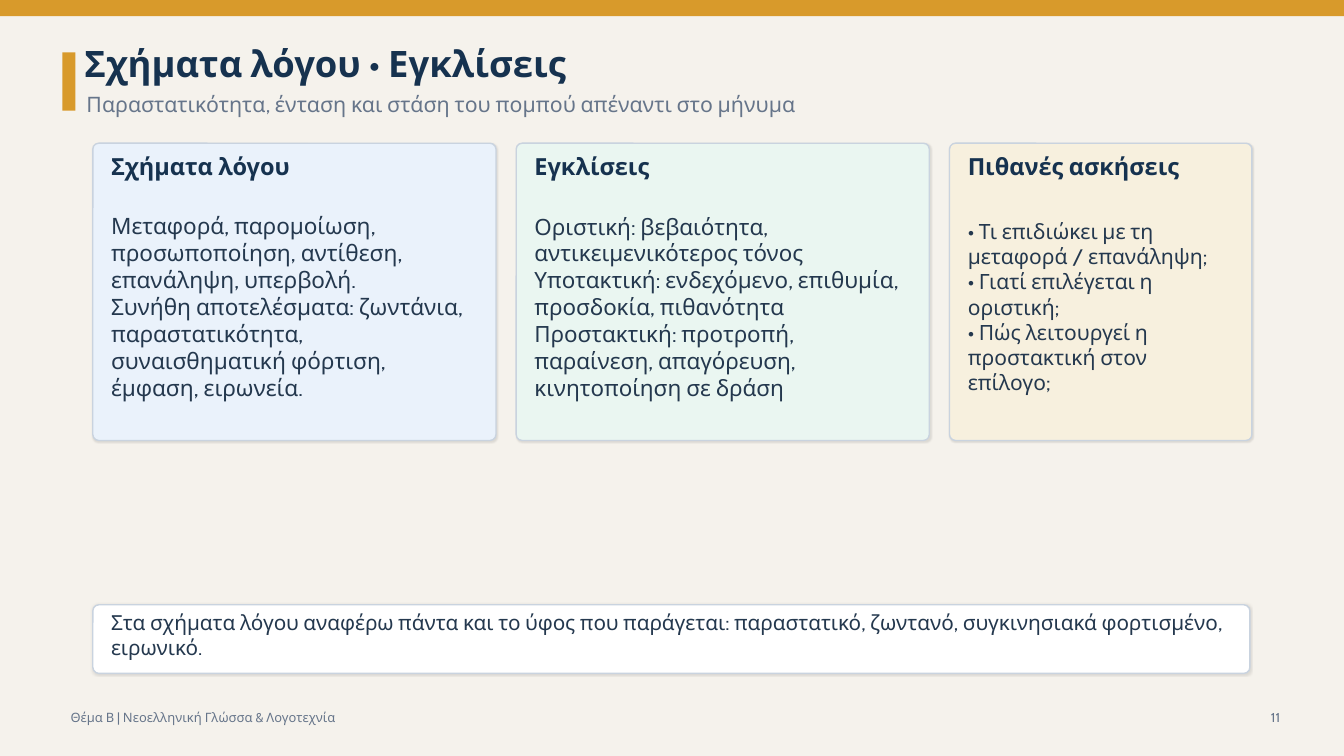
"""Build the slide on figures of speech and grammatical moods."""
from lxml import etree
from pptx import Presentation
from pptx.dml.color import RGBColor
from pptx.enum.shapes import MSO_SHAPE
from pptx.enum.text import MSO_ANCHOR, PP_ALIGN
from pptx.oxml import parse_xml
from pptx.oxml.ns import nsdecls, qn
from pptx.util import Cm, Pt

RECTANGLE, ROUNDED = MSO_SHAPE.RECTANGLE, MSO_SHAPE.ROUNDED_RECTANGLE
MIDDLE = MSO_ANCHOR.MIDDLE
LEFT, RIGHT = PP_ALIGN.LEFT, PP_ALIGN.RIGHT

FONT = "Cabin"
GOLD, NAVY, INK, GREY = "D89A2B", "16324F", "24384E", "66758A"
PAPER, WHITE, BORDER = "F5F2EC", "FFFFFF", "C9D3DF"

FRAME_FORMAT = {
    "word_wrap": True,
    "vertical_anchor": MIDDLE,
    "margin_left": 0,
    "margin_right": 0,
    "margin_top": 0,
    "margin_bottom": 0,
}
SHADOW = (
    f'<a:outerShdw {nsdecls("a")} blurRad="{Pt(1.2)}" dist="{Pt(0.5)}" '
    'dir="2700000" algn="ctr" rotWithShape="0"><a:srgbClr val="000000">'
    '<a:alpha val="10000"/></a:srgbClr></a:outerShdw>'
)

CARD_LEFT, CARD_TOP, CARD_HEIGHT = 2.34, 3.61, 7.49
CARD_GAP, CARD_INSET = 0.51, 0.46
NOTE_WIDTH = 29.16
CARDS = [
    (10.16, "EAF2FB", "Σχήματα λόγου", 16.1, [
        "Μεταφορά, παρομοίωση, προσωποποίηση, αντίθεση, επανάληψη, υπερβολή.",
        "Συνήθη αποτελέσματα: ζωντάνια, παραστατικότητα, "
        "συναισθηματική φόρτιση, έμφαση, ειρωνεία.",
    ]),
    (10.41, "EAF6F1", "Εγκλίσεις", 16, [
        "Οριστική: βεβαιότητα, αντικειμενικότερος τόνος",
        "Υποτακτική: ενδεχόμενο, επιθυμία, προσδοκία, πιθανότητα",
        "Προστακτική: προτροπή, παραίνεση, απαγόρευση, "
        "κινητοποίηση σε δράση",
    ]),
    (7.62, "F7F0DE", "Πιθανές ασκήσεις", 15, [
        "• Τι επιδιώκει με τη μεταφορά / επανάληψη;",
        "• Γιατί επιλέγεται η οριστική;",
        "• Πώς λειτουργεί η προστακτική στον επίλογο;",
    ]),
]
NOTE = ("Στα σχήματα λόγου αναφέρω πάντα και το ύφος που παράγεται: "
        "παραστατικό, ζωντανό, συγκινησιακά φορτισμένο, ειρωνικό.")


def color(value):
    """Return the colour for a hex string."""
    return RGBColor.from_string(value)


def apply(target, values):
    """Set every attribute in values on target."""
    for name, value in values.items():
        setattr(target, name, value)


def add_block(page, kind, place, fill):
    """Add a filled shape without outline or shadow."""
    block = page.shapes.add_shape(kind, *map(Cm, place))
    block.shadow.inherit = False
    block.fill.solid()
    block.fill.fore_color.rgb = color(fill)
    block.line.fill.background()
    return block


def add_panel(page, place, fill, radius):
    """Add a rounded, outlined panel with a soft shadow."""
    panel = add_block(page, ROUNDED, place, fill)
    panel.adjustments[0] = radius
    panel.line.color.rgb = color(BORDER)
    panel.line.width = Pt(1)
    effects = panel.element.spPr.find(qn("a:effectLst"))
    effects.append(parse_xml(etree.tostring(etree.fromstring(SHADOW))))


def add_text(page, place, lines, size, ink, bold=False, align=LEFT):
    """Add a text box with one paragraph for each line."""
    box = page.shapes.add_textbox(*map(Cm, place))
    apply(box.text_frame, FRAME_FORMAT)
    for index, line in enumerate(lines):
        frame = box.text_frame
        para = frame.add_paragraph() if index else frame.paragraphs[0]
        para.alignment = align
        span = para.add_run()
        span.text = line
        apply(span.font, {"name": FONT, "size": Pt(size), "bold": bold})
        span.font.color.rgb = color(ink)


def add_card(page, left, width, fill, heading, size, lines):
    """Add a panel with a heading and body text."""
    add_panel(page, (left, CARD_TOP, width, CARD_HEIGHT), fill, 0.02)
    text_left, text_width = left + CARD_INSET, width - 2 * CARD_INSET
    add_text(page, (text_left, 3.91, text_width, 0.56), [heading], 16.8, NAVY, bold=True)
    add_text(page, (text_left, 4.67, text_width, 6.12), lines, size, INK)


def add_header(page):
    """Add the top band, accent, title and subtitle."""
    add_block(page, RECTANGLE, (0, 0, 33.87, 0.41), GOLD)
    add_block(page, RECTANGLE, (1.57, 1.32, 0.33, 1.47), GOLD)
    add_text(page, (2.13, 1.07, 24.38, 1.02), ["Σχήματα λόγου • Εγκλίσεις"], 26, NAVY, bold=True)
    add_text(page, (2.18, 2.34, 27.43, 0.56),
             ["Παραστατικότητα, ένταση και στάση του πομπού απέναντι στο μήνυμα"], 15.2, GREY)


def add_footer(page):
    """Add the course name and page number."""
    add_text(page, (1.78, 17.81, 12.45, 0.51),
             ["Θέμα Β | Νεοελληνική Γλώσσα & Λογοτεχνία"], 9.2, GREY)
    add_text(page, (31.24, 17.81, 1.02, 0.51), ["11"], 9.2, GREY, align=RIGHT)


def add_note(page):
    """Add the reminder panel under the cards."""
    add_panel(page, (CARD_LEFT, 15.24, NOTE_WIDTH, 1.73), WHITE, 0.09)
    add_text(page, (CARD_LEFT + CARD_INSET, 15.32, NOTE_WIDTH - 2 * CARD_INSET, 1.35),
             [NOTE], 14.8, INK)


def main():
    """Build and save the deck."""
    deck = Presentation()
    apply(deck, {"slide_width": Cm(33.87), "slide_height": Cm(19.05)})
    page = deck.slides.add_slide(deck.slide_layouts[6])
    page.background.fill.solid()
    page.background.fill.fore_color.rgb = color(PAPER)
    add_header(page)
    add_footer(page)
    left = CARD_LEFT
    for width, *content in CARDS:
        add_card(page, left, width, *content)
        left += width + CARD_GAP
    add_note(page)
    deck.save("out.pptx")


if __name__ == "__main__":
    main()
